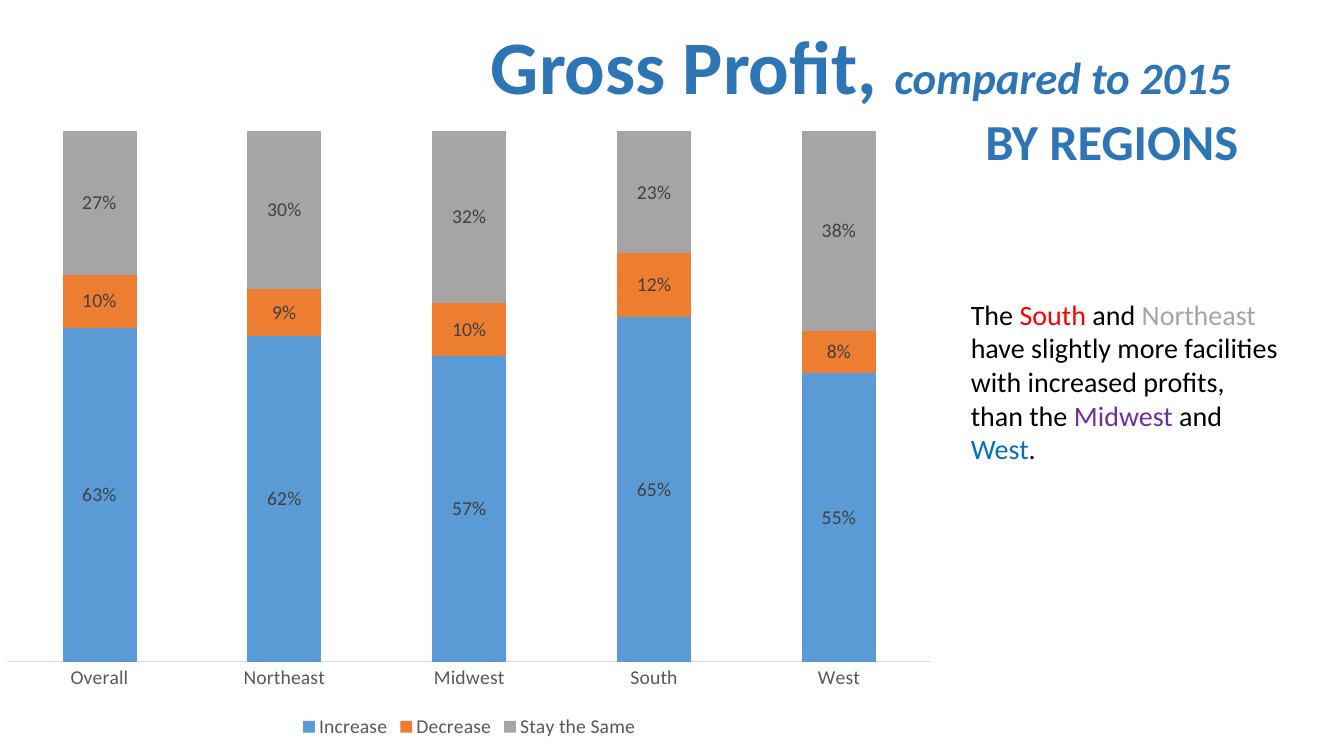
from lxml import etree
from pptx import Presentation
from pptx.chart.data import CategoryChartData
from pptx.dml.color import RGBColor
from pptx.enum.chart import XL_CHART_TYPE, XL_LABEL_POSITION, XL_LEGEND_POSITION, XL_TICK_MARK
from pptx.enum.text import MSO_AUTO_SIZE, PP_ALIGN
from pptx.oxml import parse_xml
from pptx.oxml.ns import nsdecls
from pptx.util import Inches, Pt

FONT = "Calibri"
COLORS = {
    "title": "2E75B6", "outline": "FEFEFE", "text": "000000",
    "axis_text": "595959", "axis_line": "D9D9D9", "label": "404040",
    "Increase": "5B9BD5", "Decrease": "ED7D31", "Stay the Same": "A5A5A5",
    "South": "FF0000", "Northeast": "A5A5A5", "Midwest": "7030A0", "West": "0070C0",
}


def style_font(font, size, color):
    font.name = FONT
    font.size = Pt(size)
    font.color.rgb = RGBColor.from_string(COLORS[color])


def add_span(para, text, size, color):
    span = para.add_run()
    span.text = text
    style_font(span.font, size, color)
    return span


deck = Presentation()
deck.slide_width, deck.slide_height = Inches(13.33), Inches(7.5)
page = deck.slides.add_slide(deck.slide_layouts[6])

# Title: two lines with a thin outline round the letters
title_box = page.shapes.add_textbox(Inches(4.7), Inches(0.14), Inches(7.68), Inches(1.62))
title_frame = title_box.text_frame
title_frame.word_wrap = False
title_frame.auto_size = MSO_AUTO_SIZE.SHAPE_TO_FIT_TEXT
heading = title_frame.paragraphs[0]
heading.alignment = PP_ALIGN.CENTER
subheading = title_frame.add_paragraph()
subheading.alignment = PP_ALIGN.RIGHT
for para, text, size, italic in [
    (heading, "Gross Profit, ", 54, False),
    (heading, "compared to 2015", 32, True),
    (subheading, "BY REGIONS", 36, False),
]:
    span = add_span(para, text, size, "title")
    span.font.bold = True
    span.font.italic = italic
    span._r.get_or_add_rPr().insert(0, parse_xml(
        f'<a:ln {nsdecls("a")} w="{Pt(1.5)}"><a:solidFill>'
        f'<a:srgbClr val="{COLORS["outline"]}"/></a:solidFill></a:ln>'))

# Chart: share of facilities by change in profit
shares = CategoryChartData(number_format="0%")
shares.categories = ["Overall", "Northeast", "Midwest", "South", "West"]
shares.add_series("Increase", [0.63, 0.62, 0.57, 0.65, 0.55])
shares.add_series("Decrease", [0.10, 0.09, 0.10, 0.12, 0.08])
shares.add_series("Stay the Same", [0.27, 0.30, 0.32, 0.23, 0.38])
chart = page.shapes.add_chart(
    XL_CHART_TYPE.COLUMN_STACKED_100,
    Inches(-0.12), Inches(1.18), Inches(9.55), Inches(6.19), shares).chart
chart.has_title = False
style_font(chart.font, 10, "text")

plot = chart.plots[0]
plot.gap_width, plot.overlap = 150, 100
plot.vary_by_categories = False
for series in plot.series:
    series.format.fill.solid()
    series.format.fill.fore_color.rgb = RGBColor.from_string(COLORS[series.name])
    labels = series.data_labels
    labels.show_value = True
    labels.position = XL_LABEL_POSITION.CENTER
    labels.number_format, labels.number_format_is_linked = "0%", False
    style_font(labels.font, 14, "label")

# Axes and legend
regions = chart.category_axis
regions.major_tick_mark = XL_TICK_MARK.NONE
regions.format.line.color.rgb = RGBColor.from_string(COLORS["axis_line"])
regions.format.line.width = Pt(0.75)
style_font(regions.tick_labels.font, 14, "axis_text")
chart.value_axis.has_major_gridlines = False
chart.value_axis.visible = False
chart.has_legend = True
chart.legend.position = XL_LEGEND_POSITION.BOTTOM
chart.legend.include_in_layout = False
style_font(chart.legend.font, 14, "axis_text")

# Plot area as shares of the chart frame
plot_area = chart._chartSpace.chart.plotArea
for old_layout in plot_area.findall("c:layout", plot_area.nsmap):
    plot_area.remove(old_layout)
layout = parse_xml(f'<c:layout {nsdecls("c")}><c:manualLayout/></c:layout>')
for tag, value in [("layoutTarget", "inner"), ("xMode", "edge"), ("yMode", "edge"),
                   ("x", "0.02"), ("y", "0.02"), ("w", "0.96"), ("h", "0.85")]:
    etree.SubElement(layout[0], f"{{{plot_area.nsmap['c']}}}{tag}").set("val", value)
plot_area.insert(0, layout)

# Comment with each region in its own colour
comment_box = page.shapes.add_textbox(Inches(9.53), Inches(2.9), Inches(3.28), Inches(1.78))
comment_frame = comment_box.text_frame
comment_frame.word_wrap = True
comment_frame.auto_size = MSO_AUTO_SIZE.SHAPE_TO_FIT_TEXT
for text in ["The ", "South", " and ", "Northeast",
             " have slightly more facilities with increased profits, than the ",
             "Midwest", " and ", "West", "."]:
    add_span(comment_frame.paragraphs[0], text, 20, text if text in COLORS else "text")

deck.save("out.pptx")
